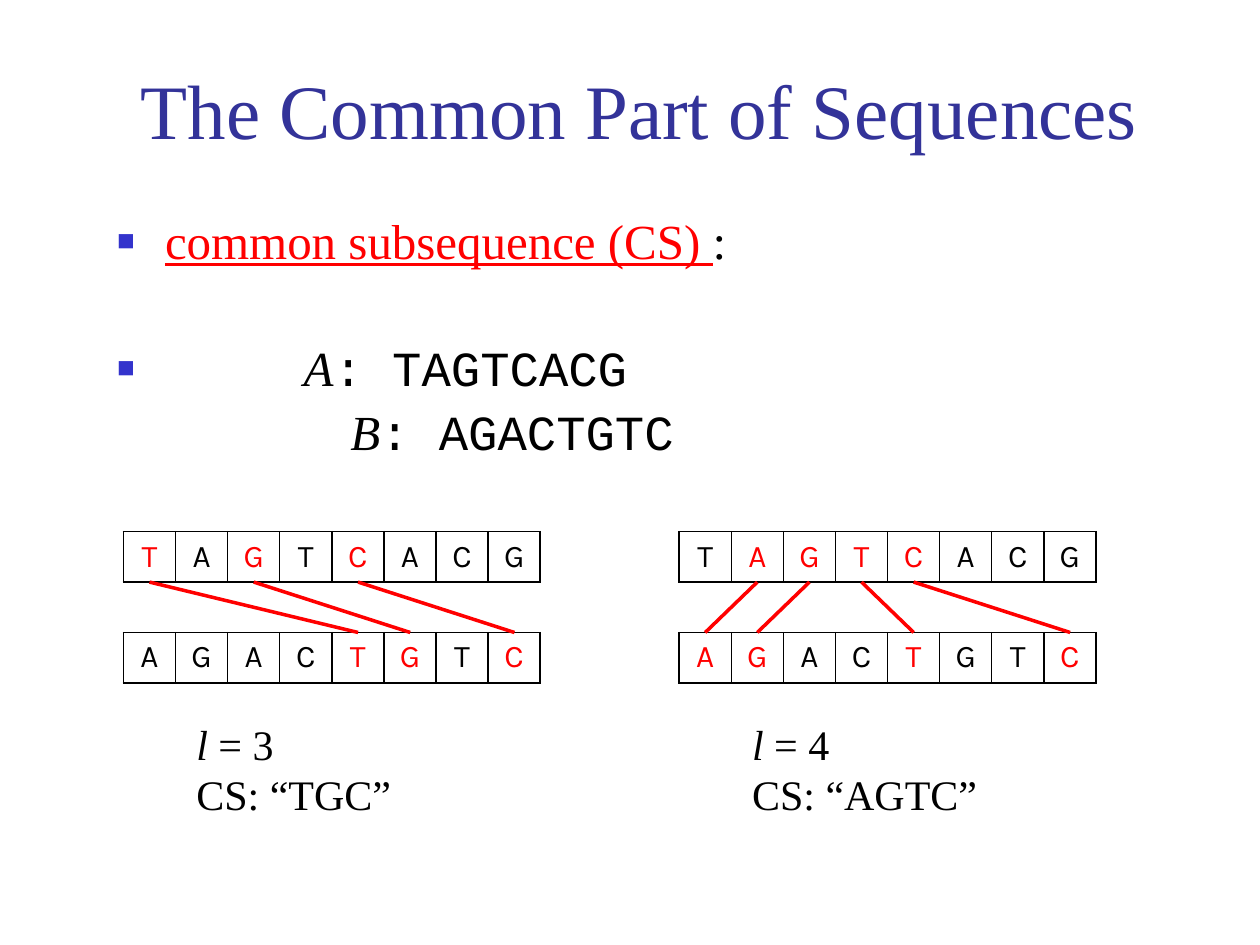
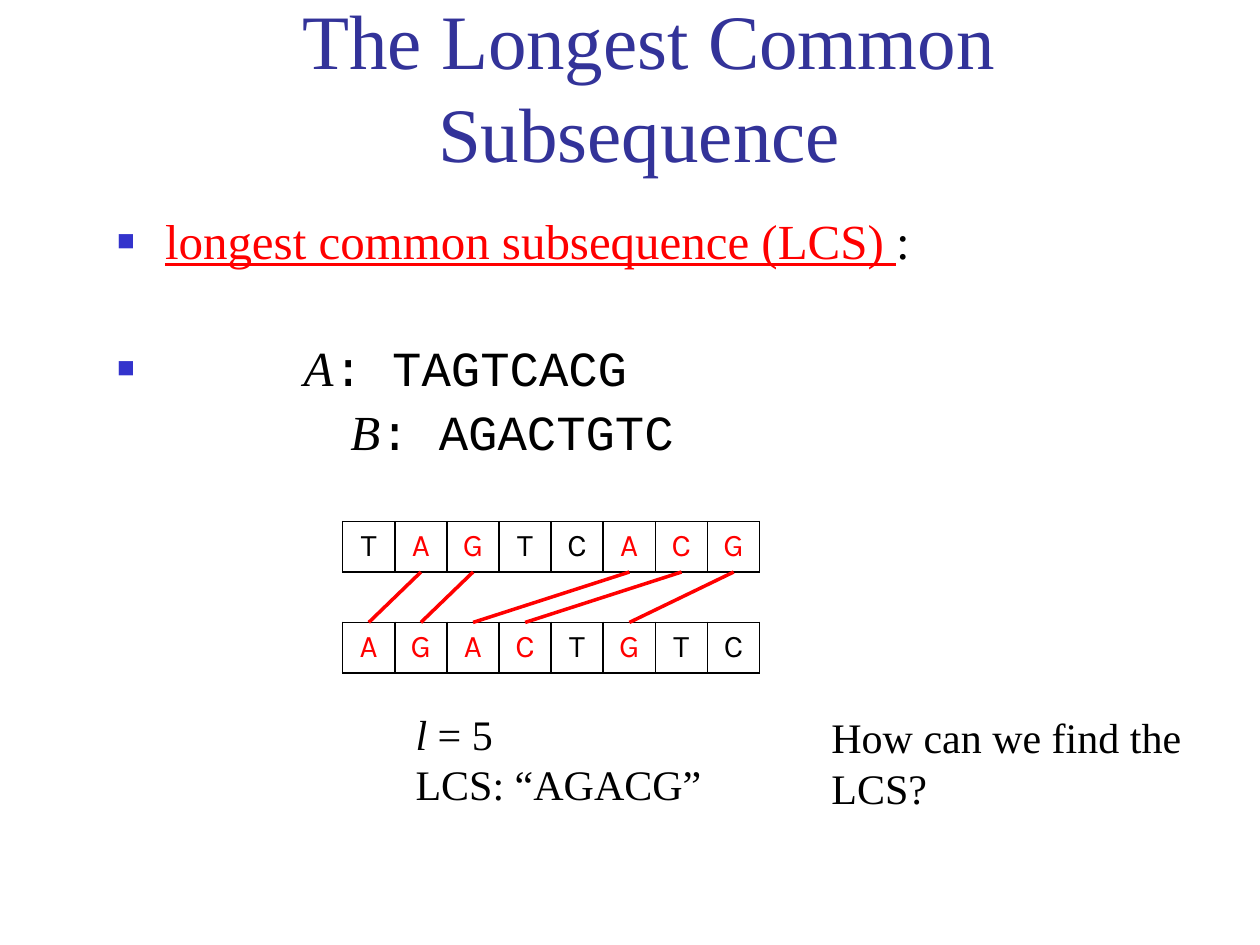
from dataclasses import dataclass

from lxml.etree import SubElement
from pptx import Presentation
from pptx.dml.color import RGBColor
from pptx.enum.shapes import MSO_CONNECTOR as Connector
from pptx.enum.text import MSO_ANCHOR as Anchor, MSO_AUTO_SIZE as AutoSize, PP_ALIGN as Align
from pptx.oxml.ns import qn
from pptx.util import Inches, Pt


@dataclass(frozen=True)
class Theme:
    title: str = "333399"
    bullet: str = "3333CC"
    match: str = "FF0000"
    ink: str = "000000"
    serif: str = "Times New Roman"
    mono: str = "Courier New"
    cell: str = "Karla"
    title_size: int = 44
    body_size: int = 28
    caption_size: int = 24
    cell_size: int = 18


THEME = Theme()
SEQUENCE_A = "TAGTCACG"
SEQUENCE_B = "AGACTGTC"
STRIP_WIDTH = 3.31
STRIP_HEIGHT = 0.4
STRIP_PITCH = 0.8
CELL_WIDTH = STRIP_WIDTH / len(SEQUENCE_A)


def box(left, top, width, height):
    return Inches(left), Inches(top), Inches(width), Inches(height)


def place(shape, left, top, width, height):
    shape.left, shape.top, shape.width, shape.height = box(left, top, width, height)


def add_run(paragraph, text, size, color=THEME.ink, font=THEME.serif, italic=False, underline=False):
    run = paragraph.add_run()
    run.text = text
    run.font.name = font
    run.font.size = Pt(size)
    run.font.color.rgb = RGBColor.from_string(color)
    run.font.bold = False
    run.font.italic = italic
    run.font.underline = underline


def add_color(parent, color):
    SubElement(parent, qn("a:srgbClr"), val=color)


def format_item(paragraph, margin, hanging, space_before, bulleted=True):
    paragraph.line_spacing = 0.9
    paragraph.space_before = Pt(space_before)
    properties = paragraph._p.get_or_add_pPr()
    properties.set("marL", str(Inches(margin)))
    properties.set("indent", str(-Inches(hanging)))
    if bulleted:
        add_color(SubElement(properties, qn("a:buClr")), THEME.bullet)
        SubElement(properties, qn("a:buSzPct"), val="60000")
        SubElement(properties, qn("a:buChar"), char="■")
    else:
        SubElement(properties, qn("a:buNone"))


def set_title(slide, text, top, height):
    title = slide.shapes.title
    place(title, 0.89, top, 8.52, height)
    frame = title.text_frame
    frame.auto_size = AutoSize.NONE
    frame.vertical_anchor = Anchor.BOTTOM
    paragraph = frame.paragraphs[0]
    paragraph.alignment = Align.CENTER
    add_run(paragraph, text, THEME.title_size, THEME.title)


def set_body(slide, term):
    body = slide.placeholders[1]
    place(body, 0.83, 1.67, 8.5, 2.16)
    frame = body.text_frame
    frame.auto_size = AutoSize.NONE
    heading = frame.paragraphs[0]
    format_item(heading, 0.38, 0.38, 6.5)
    add_run(heading, term, THEME.body_size, THEME.match, underline=True)
    add_run(heading, ":", THEME.body_size)
    items = (
        ("A", SEQUENCE_A, 1.48, 1.48, 42.5, True),
        ("B", SEQUENCE_B, 1.85, 0, 6.5, False),
    )
    for name, sequence, margin, hanging, space_before, bulleted in items:
        paragraph = frame.add_paragraph()
        format_item(paragraph, margin, hanging, space_before, bulleted)
        add_run(paragraph, name, THEME.body_size, italic=True)
        add_run(paragraph, f": {sequence}", THEME.body_size, font=THEME.mono)


def outline_cell(cell):
    properties = cell._tc.get_or_add_tcPr()
    for side in ("lnL", "lnR", "lnT", "lnB"):
        border = SubElement(properties, qn(f"a:{side}"), w=str(Pt(1)))
        add_color(SubElement(border, qn("a:solidFill")), THEME.ink)


def add_strip(slide, sequence, matches, left, top):
    frame = slide.shapes.add_table(1, len(sequence), *box(left, top, STRIP_WIDTH, STRIP_HEIGHT))
    table = frame.table
    table.first_row = False
    table.horz_banding = False
    for index, letter in enumerate(sequence):
        table.columns[index].width = Inches(CELL_WIDTH)
        cell = table.cell(0, index)
        outline_cell(cell)
        cell.fill.background()
        paragraph = cell.text_frame.paragraphs[0]
        paragraph.alignment = Align.CENTER
        color = THEME.match if index in matches else THEME.ink
        add_run(paragraph, letter, THEME.cell_size, color, THEME.cell)


def add_link(slide, start_x, start_y, end_x, end_y):
    line = slide.shapes.add_connector(Connector.STRAIGHT, *box(start_x, start_y, end_x, end_y))
    line.line.color.rgb = RGBColor.from_string(THEME.match)
    line.line.width = Pt(2)
    SubElement(line._element.spPr, qn("a:effectLst"))


def add_text_box(slide, left, top, width):
    frame = slide.shapes.add_textbox(*box(left, top, width, 0.91)).text_frame
    frame.word_wrap = True
    frame.auto_size = AutoSize.SHAPE_TO_FIT_TEXT
    return frame


def add_alignment(slide, left, top, links, label, caption_width):
    upper, lower = zip(*links)
    add_strip(slide, SEQUENCE_A, upper, left, top)
    add_strip(slide, SEQUENCE_B, lower, left, top + STRIP_PITCH)
    for upper_index, lower_index in links:
        add_link(
            slide,
            left + (upper_index + 0.5) * CELL_WIDTH, top + STRIP_HEIGHT,
            left + (lower_index + 0.5) * CELL_WIDTH, top + STRIP_PITCH,
        )
    frame = add_text_box(slide, left + 0.48, top + 1.43, caption_width)
    length = frame.paragraphs[0]
    add_run(length, "l", THEME.caption_size, italic=True)
    add_run(length, f" = {len(links)}", THEME.caption_size)
    common = "".join(SEQUENCE_A[index] for index in upper)
    add_run(frame.add_paragraph(), f"{label}: “{common}”", THEME.caption_size)


def add_sequence_slide(presentation, title, title_top, title_height, term):
    slide = presentation.slides.add_slide(presentation.slide_layouts[1])
    set_title(slide, title, title_top, title_height)
    set_body(slide, term)
    return slide


def main():
    presentation = Presentation()
    presentation.slide_width = Inches(10)
    presentation.slide_height = Inches(7.5)

    common = add_sequence_slide(
        presentation, "The Common Part of Sequences ", 0.52, 0.76, "common subsequence (CS) ")
    add_alignment(common, 0.98, 4.22, [(0, 4), (2, 5), (4, 7)], "CS", 1.81)
    add_alignment(common, 5.39, 4.22, [(1, 0), (2, 1), (3, 4), (4, 7)], "CS", 2.05)

    longest = add_sequence_slide(
        presentation, "The Longest Common Subsequence ", 0.31, 1.15, "longest common subsequence (LCS) ")
    add_alignment(longest, 2.72, 4.14, [(1, 0), (2, 1), (5, 2), (6, 3), (7, 5)], "LCS", 2.52)
    question = add_text_box(longest, 6.5, 5.6, 3.15)
    add_run(question.paragraphs[0], "How can we find the LCS?", THEME.caption_size)

    presentation.save("out.pptx")


if __name__ == "__main__":
    main()
